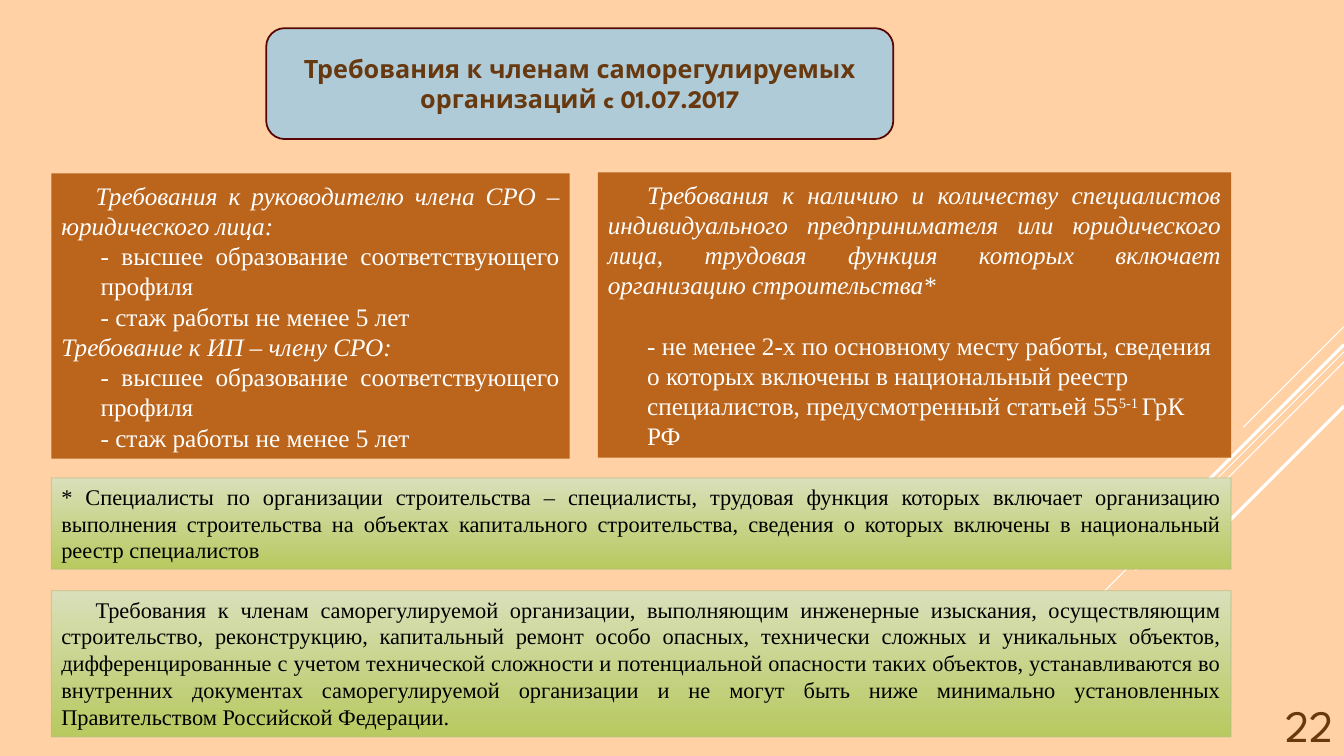
import pptx
import pptx.util
import pptx.dml.color
import pptx.enum.shapes
import pptx.enum.text
import pptx.oxml
import pptx.oxml.ns
from dataclasses import dataclass

Inches = pptx.util.Inches
Pt = pptx.util.Pt
ALIGN = pptx.enum.text.PP_ALIGN
ANCHOR = pptx.enum.text.MSO_ANCHOR
SHAPE = pptx.enum.shapes.MSO_SHAPE


@dataclass(frozen=True)
class Theme:
    background: str = "FFD1A4"
    stripe: str = "FFFFFF"
    title_fill: str = "AFCBD7"
    title_line: str = "570402"
    heading: str = "68380F"
    card: str = "BB641B"
    card_text: str = "FFFFFF"
    note_top: str = "DADFBA"
    note_bottom: str = "B7C95F"
    note_line: str = "B8BE89"
    note_text: str = "000000"
    heading_font: str = "League Spartan"
    body_font: str = "Times New Roman"
    body_size: int = 18
    note_size: int = 16
    number_size: int = 32


THEME = Theme()
LIST_INDENT = 0.39


def rgb(code):
    return pptx.dml.color.RGBColor.from_string(code)


def add_span(para, text, font, size, color, bold=False, italic=False):
    span = para.add_run()
    span.text = text
    span.font.name = font
    span.font.size = Pt(size)
    span.font.color.rgb = rgb(color)
    span.font.bold = bold
    span.font.italic = italic
    return span


def next_para(frame, align, left=0, first=0):
    """Take the empty first paragraph or add one; indents are in inches."""
    para = frame.paragraphs[0]
    if para.runs:
        para = frame.add_paragraph()
    para.alignment = align
    properties = para._p.get_or_add_pPr()
    properties.set("marL", str(Inches(left)))
    properties.set("indent", str(Inches(first)))
    return para


def add_panel(page, box, kind=SHAPE.RECTANGLE, anchor=ANCHOR.MIDDLE):
    panel = page.shapes.add_shape(kind, *map(Inches, box))
    panel.shadow.inherit = False
    panel.text_frame.word_wrap = True
    panel.text_frame.vertical_anchor = anchor
    return panel


def add_stripes(page, right):
    """Diagonal lines at 45 degrees running down from the right edge."""
    stripes = [(3.24, 1, 0.75), (3.49, 3.26, 0.75), (3.59, 2.07, 0.75),
               (3.42, 1.91, 2.25), (4.03, 1.39, 2.25)]
    for top, reach, width in stripes:
        stripe = page.shapes.add_connector(
            pptx.enum.shapes.MSO_CONNECTOR.STRAIGHT, Inches(right), Inches(top),
            Inches(right - reach), Inches(top + reach))
        stripe.line.color.rgb = rgb(THEME.stripe)
        stripe.line.width = Pt(width)
        pptx.oxml.ns.qn("a:effectLst")
        stripe._element.spPr.append(pptx.oxml.parse_xml(
            "<a:effectLst %s/>" % pptx.oxml.ns.nsdecls("a")))


def add_title(page, box, text):
    panel = add_panel(page, box, SHAPE.ROUNDED_RECTANGLE)
    panel.fill.solid()
    panel.fill.fore_color.rgb = rgb(THEME.title_fill)
    panel.line.color.rgb = rgb(THEME.title_line)
    panel.line.width = Pt(1.25)
    add_span(next_para(panel.text_frame, ALIGN.CENTER), text,
             THEME.heading_font, THEME.body_size, THEME.heading, bold=True)


def add_card(page, box):
    panel = add_panel(page, box)
    panel.fill.solid()
    panel.fill.fore_color.rgb = rgb(THEME.card)
    panel.line.fill.background()
    return panel.text_frame


def add_card_span(para, text, italic=False):
    return add_span(para, text, THEME.body_font, THEME.body_size,
                    THEME.card_text, italic=italic)


def add_leader_card(page, box):
    frame = add_card(page, box)
    groups = [("Требования к руководителю члена СРО – юридического лица:", 0.34),
              ("Требование к ИП – члену СРО:", 0)]
    demands = ["- высшее образование соответствующего профиля",
               "- стаж работы не менее 5 лет"]
    for heading, first in groups:
        add_card_span(next_para(frame, ALIGN.JUSTIFY, first=first), heading, True)
        for demand in demands:
            add_card_span(next_para(frame, ALIGN.JUSTIFY, LIST_INDENT), demand)


def add_staff_card(page, box):
    frame = add_card(page, box)
    add_card_span(
        next_para(frame, ALIGN.JUSTIFY, first=0.39),
        "Требования к наличию и количеству специалистов индивидуального "
        "предпринимателя или юридического лица, трудовая функция которых "
        "включает организацию строительства*", True)
    para = next_para(frame, ALIGN.LEFT, LIST_INDENT)
    para.space_before = Pt(21.6)
    add_card_span(para, "- не менее 2-х по основному месту работы, сведения о "
                  "которых включены в национальный реестр специалистов, "
                  "предусмотренный статьей 55")
    power = add_card_span(para, "5-1 ")
    power.font._element.set("baseline", "30000")
    add_card_span(para, "ГрК РФ")


def add_note(page, box, text, first=0):
    panel = add_panel(page, box, anchor=ANCHOR.TOP)
    panel.fill.gradient()
    panel.fill.gradient_angle = 270
    for stop, color, position in zip(panel.fill.gradient_stops,
                                     (THEME.note_top, THEME.note_bottom), (0, 1)):
        stop.color.rgb = rgb(color)
        stop.position = position
    panel.line.color.rgb = rgb(THEME.note_line)
    panel.line.width = Pt(0.75)
    line_color = panel.line._ln.find(".//" + pptx.oxml.ns.qn("a:srgbClr"))
    line_color.append(pptx.oxml.parse_xml(
        '<a:alpha %s val="60000"/>' % pptx.oxml.ns.nsdecls("a")))
    add_span(next_para(panel.text_frame, ALIGN.JUSTIFY, first=first), text,
             THEME.body_font, THEME.note_size, THEME.note_text)


def add_page_number(page, box, number):
    frame = page.shapes.add_textbox(*map(Inches, box)).text_frame
    frame.word_wrap = True
    frame.vertical_anchor = ANCHOR.BOTTOM
    add_span(next_para(frame, ALIGN.RIGHT), number, THEME.heading_font,
             THEME.number_size, THEME.heading)


def build_requirements(page, width):
    page.background.fill.solid()
    page.background.fill.fore_color.rgb = rgb(THEME.background)
    add_stripes(page, width)
    add_title(page, (2.64, 0.28, 6.22, 1.1),
              "Требования к членам саморегулируемых организаций c 01.07.2017")
    add_leader_card(page, (0.51, 1.72, 5.14, 2.83))
    add_staff_card(page, (5.93, 1.71, 6.28, 2.83))
    add_note(page, (0.51, 4.74, 11.7, 0.91),
             "* Специалисты по организации строительства – специалисты, трудовая "
             "функция которых включает организацию выполнения строительства на "
             "объектах капитального строительства, сведения о которых включены "
             "в национальный реестр специалистов")
    add_page_number(page, (width - 1.25, 6.77, 1.25, 0.73), "22")
    add_note(page, (0.51, 5.86, 11.7, 1.45),
             "Требования к членам саморегулируемой организации, выполняющим "
             "инженерные изыскания, осуществляющим строительство, реконструкцию, "
             "капитальный ремонт особо опасных, технически сложных и уникальных "
             "объектов, дифференцированные с учетом технической сложности "
             "и потенциальной опасности таких объектов, устанавливаются во "
             "внутренних документах саморегулируемой организации и не могут быть "
             "ниже минимально установленных Правительством Российской Федерации.",
             first=0.34)


def main():
    width = 13.33
    deck = pptx.Presentation()
    deck.slide_width = Inches(width)
    deck.slide_height = Inches(7.5)
    build_requirements(deck.slides.add_slide(deck.slide_layouts[6]), width)
    deck.save("out.pptx")


if __name__ == "__main__":
    main()
